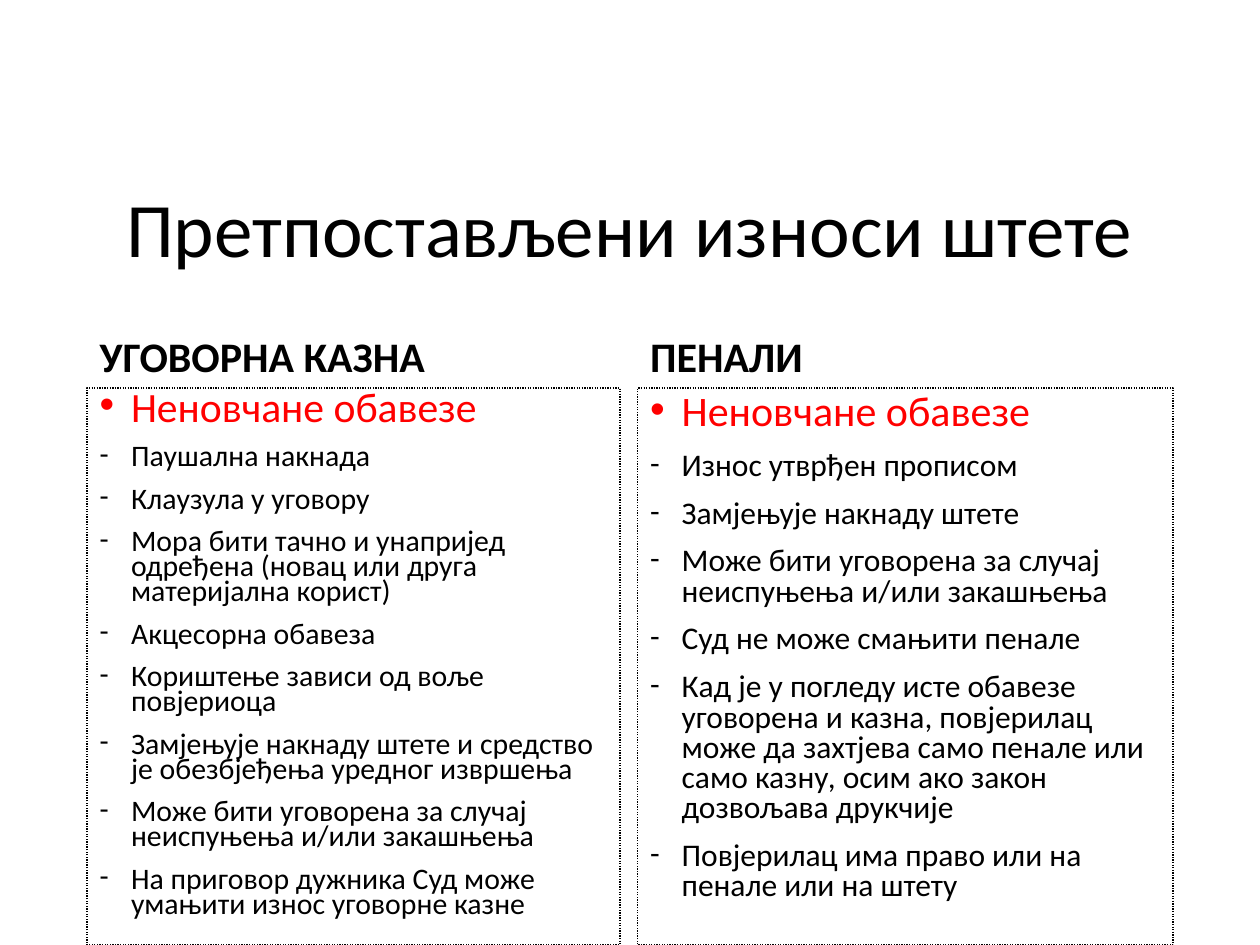
from lxml import etree
from pptx import Presentation
from pptx import util as u
from pptx.dml.color import RGBColor
from pptx.enum import dml, text
from pptx.oxml.ns import qn

THEME = {
    "font": "Calibri",
    "ink": RGBColor(0, 0, 0),
    "accent": RGBColor(255, 0, 0),
    "title": 44,
    "heading": 24,
    "indent": u.Inches(0.25),
    "gap": u.Pt(10),
}

MARGIN, GUTTER, HEAD_TOP, BODY_TOP, BOTTOM = 0.69, 0.14, 2.18, 3.08, 7.5

COLUMNS = [
    {
        "heading": "УГОВОРНА КАЗНА", "width": 4.23,
        "lead_size": 23.8, "size": 17, "spacing": 0.7,
        "lead": "Неновчане обавезе",
        "items": [
            "Паушална накнада",
            "Клаузула у уговору",
            "Мора бити тачно и унапријед одређена (новац или друга материјална корист)",
            "Акцесорна обавеза",
            "Кориштење зависи од воље повјериоца",
            "Замјењује накнаду штете и средство је обезбјеђења уредног извршења",
            "Може бити уговорена за случај неиспуњења и/или закашњења",
            "На приговор дужника Суд може умањити износ уговорне казне",
        ],
    },
    {
        "heading": "ПЕНАЛИ", "width": 4.25,
        "lead_size": 24, "size": 18, "spacing": 0.8,
        "lead": "Неновчане обавезе",
        "items": [
            "Износ утврђен прописом",
            "Замјењује накнаду штете",
            "Може бити уговорена за случај неиспуњења и/или закашњења",
            "Суд не може смањити пенале",
            "Кад је у погледу исте обавезе уговорена и казна, повјерилац може да "
            "захтјева само пенале или само казну, осим ако закон дозвољава друкчије",
            "Повјерилац има право или на пенале или на штету",
        ],
    },
]


def place(sp, left, top, width, height, anchor):
    """Position a placeholder and return its text frame, ready to fill."""
    sp.left, sp.top, sp.width, sp.height = map(u.Inches, (left, top, width, height))
    tf = sp.text_frame
    tf.word_wrap = True
    tf.auto_size = text.MSO_AUTO_SIZE.NONE
    tf.vertical_anchor = anchor
    return tf


def write(tf, words, size, color, spacing=0.9, bold=False, bullet=None,
          align=text.PP_ALIGN.LEFT):
    """Fill the empty first paragraph, or append one after it."""
    first = not tf.paragraphs[0].runs
    p = tf.paragraphs[0] if first else tf.add_paragraph()
    if bullet:
        pPr = p._p.get_or_add_pPr()
        pPr.set("marL", str(THEME["indent"]))
        pPr.set("indent", str(-THEME["indent"]))
        font = "Arial" if bullet == "•" else THEME["font"]
        etree.SubElement(pPr, qn("a:buFont")).set("typeface", font)
        etree.SubElement(pPr, qn("a:buChar")).set("char", bullet)
    p.alignment = align
    p.line_spacing = spacing
    p.space_before = u.Pt(0) if first else THEME["gap"]
    r = p.add_run()
    r.text = words
    r.font.name = THEME["font"]
    r.font.size = u.Pt(size)
    r.font.bold = bold
    r.font.color.rgb = color


prs = Presentation()
prs.slide_width, prs.slide_height = u.Inches(10), u.Inches(7.5)
s = prs.slides.add_slide(prs.slide_layouts.get_by_name("Comparison"))
title, *pairs = s.placeholders

tf = place(title, MARGIN, 1.12, 10 - 2 * MARGIN, 1.45, text.MSO_ANCHOR.MIDDLE)
write(tf, "Претпостављени износи штете", THEME["title"], THEME["ink"],
      align=text.PP_ALIGN.CENTER)

left = MARGIN
for col, heading, body in zip(COLUMNS, pairs[::2], pairs[1::2]):
    tf = place(heading, left, HEAD_TOP, col["width"], BODY_TOP - HEAD_TOP,
               text.MSO_ANCHOR.BOTTOM)
    write(tf, col["heading"], THEME["heading"], THEME["ink"], bold=True)

    tf = place(body, left, BODY_TOP, col["width"], BOTTOM - BODY_TOP,
               text.MSO_ANCHOR.TOP)
    body.line.color.rgb = THEME["ink"]
    body.line.width = u.Pt(0.75)
    body.line.dash_style = dml.MSO_LINE.ROUND_DOT
    write(tf, col["lead"], col["lead_size"], THEME["accent"], col["spacing"],
          bullet="•")
    for item in col["items"]:
        write(tf, item, col["size"], THEME["ink"], col["spacing"], bullet="-")
    left += col["width"] + GUTTER

prs.save("out.pptx")
